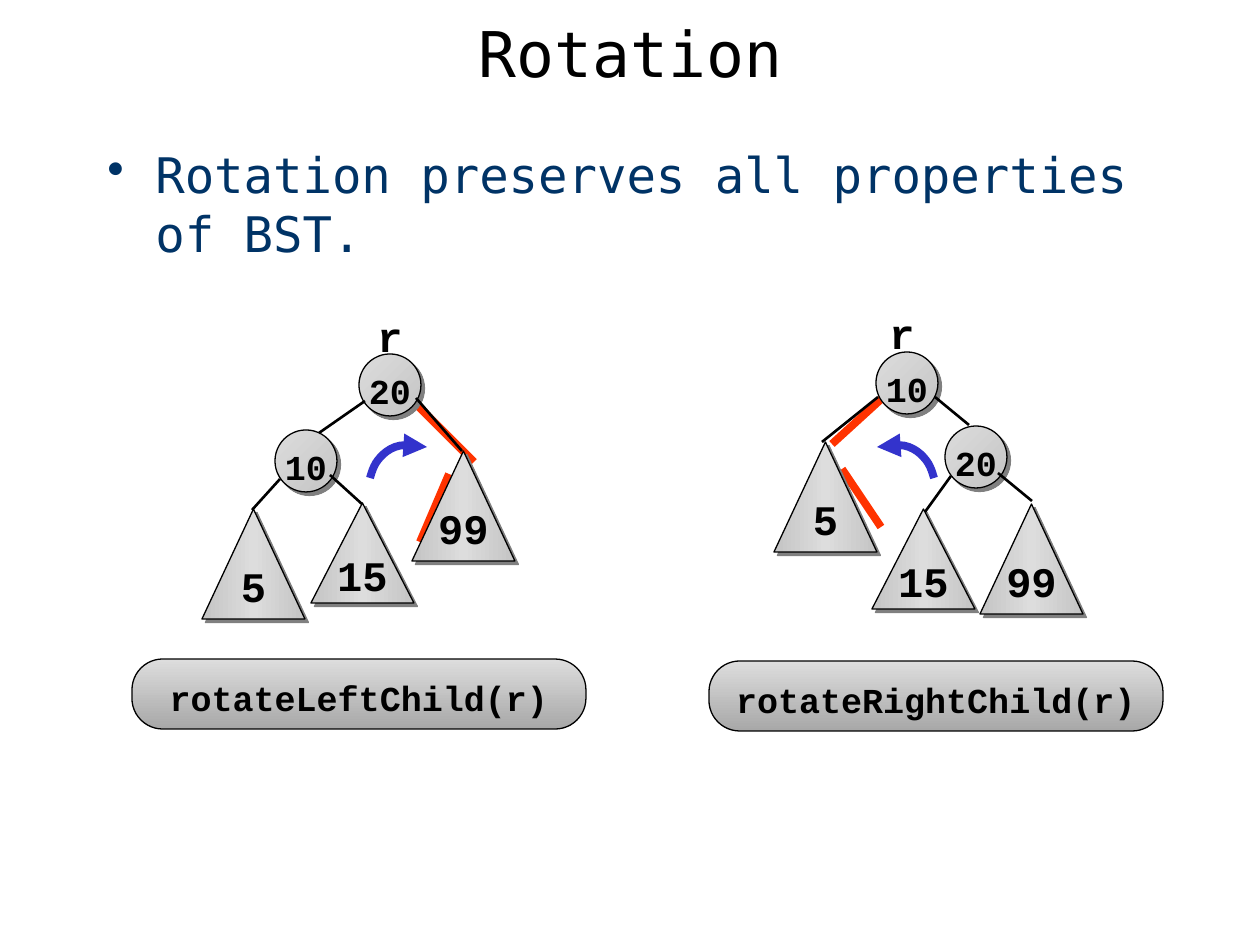
from lxml import etree
from pptx import Presentation
from pptx import util as u
from pptx.dml.color import RGBColor
from pptx.enum import shapes, text
from pptx.oxml import ns

BLACK = RGBColor(0x00, 0x00, 0x00)
NAVY = RGBColor(0x00, 0x33, 0x66)
BLUE = RGBColor(0x33, 0x33, 0xCC)
RED = RGBColor(0xFF, 0x33, 0x00)
SHADOW = RGBColor(0x80, 0x80, 0x80)
LIGHT = RGBColor(0xDD, 0xDD, 0xDD)
MID = RGBColor(0xC4, 0xC4, 0xC4)
DARK = RGBColor(0xA8, 0xA8, 0xA8)
SANS = "DejaVu Sans Mono"
MONO = "Courier New"
CIRCLE, TRIANGLE_W = 62, 103

ARC = [
    [(0, 34), (2, 27), (4, 21), (8, 16)],
    [(8, 16), (12, 11), (17, 6), (25, 3)],
    [(25, 3), (32, 0), (45, 1), (57, 3)],
]

LEFT = {
    "label": (233, 0),
    "marks": [((276, 99), (342, 165)), ((288, 245), (317, 177))],
    "triangles": [("15", 179, 206, 100), ("99", 280, 154, 110), ("5", 70, 212, 110)],
    "circles": [("20", 227, 57), ("10", 143, 133)],
    "edges": [((233, 104), (187, 136)), ((284, 101), (330, 154)),
              ((148, 182), (120, 213)), ((198, 178), (230, 207))],
    "arc": (238, 147),
    "mirror": False,
    "call": ("rotateLeftChild(r)", 362),
}
RIGHT = {
    "label": (168, 0),
    "marks": [((133, 175), (172, 233)), ((192, 87), (123, 150))],
    "triangles": [("15", 163, 215, 100), ("5", 65, 148, 110), ("99", 271, 210, 110)],
    "circles": [("10", 167, 58), ("20", 236, 132)],
    "edges": [((169, 103), (113, 148)), ((226, 103), (260, 131)),
              ((242, 182), (216, 218)), ((289, 179), (323, 207))],
    "arc": (168, 150),
    "mirror": True,
    "call": ("rotateRightChild(r)", 367),
}


def px(n):
    return u.Emu(round(n * 914400 / 126))


def add(parent, tag, **attrs):
    el = etree.SubElement(parent, ns.qn(tag))
    for key, value in attrs.items():
        el.set(key, str(value))
    return el


def write(sp, words, size, font, color, bold=False, align=text.PP_ALIGN.CENTER,
          anchor=text.MSO_ANCHOR.TOP, wrap=False, top=6):
    tf = sp.text_frame
    tf.text = words
    tf.word_wrap = wrap
    tf.vertical_anchor = anchor
    tf.margin_top = px(top)
    p = tf.paragraphs[0]
    p.alignment = align
    f = p.runs[0].font
    f.size, f.name, f.bold = u.Pt(size), font, bold
    f.color.rgb = color
    return p


def textbox(s, box, words, size, font, color, **style):
    sp = s.shapes.add_textbox(*map(px, box))
    return write(sp, words, size, font, color, **style)


def gradient_shape(s, kind, box, colors, angle, shadow):
    sp = s.shapes.add_shape(kind, *map(px, box))
    sp.shadow.inherit = False
    sp.line.color.rgb = BLACK
    sp.line.width = u.Pt(0.75)
    sp.fill.gradient()
    spPr = sp._element.spPr
    grad = spPr.find(ns.qn("a:gradFill"))
    for child in list(grad):
        grad.remove(child)
    stops = add(grad, "a:gsLst")
    for i, color in enumerate(colors):
        gs = add(stops, "a:gs", pos=100000 * i // (len(colors) - 1))
        add(gs, "a:srgbClr", val=color)
    add(grad, "a:lin", ang=angle * 60000, scaled=0)
    if shadow:
        shade = add(spPr.find(ns.qn("a:effectLst")), "a:outerShdw", blurRad=0,
                    dist=u.Pt(2.8), dir=45 * 60000, algn="ctr", rotWithShape=0)
        add(shade, "a:srgbClr", val=SHADOW)
    return sp


def node(s, kind, box, words, size, colors, angle):
    sp = gradient_shape(s, kind, box, colors, angle, True)
    p = write(sp, words, size, MONO, BLACK, bold=True)
    tf = sp.text_frame
    tf.margin_left = tf.margin_right = tf.margin_bottom = 0
    return p


def line(s, x, y, ends, color, width):
    (x1, y1), (x2, y2) = ends
    c = s.shapes.add_connector(shapes.MSO_CONNECTOR.STRAIGHT, px(x + x1), px(y + y1),
                               px(x + x2), px(y + y2))
    c.line.color.rgb = color
    c.line.width = u.Pt(width)
    add(c._element.spPr, "a:effectLst")


def bezier(curve, t):
    weights = ((1 - t) ** 3, 3 * t * (1 - t) ** 2, 3 * t * t * (1 - t), t ** 3)
    return [sum(w * pt[axis] for w, pt in zip(weights, curve)) for axis in (0, 1)]


def turn_arrow(s, x, y, mirror):
    pts = [ARC[0][0]] + [bezier(curve, k / 5) for curve in ARC for k in range(1, 6)]
    pts = [(px(x + (57 - a if mirror else a)), px(y + b)) for a, b in pts]
    fb = s.shapes.build_freeform(*pts[0], scale=1.0)
    fb.add_line_segments(pts[1:], close=False)
    sp = fb.convert_to_shape()
    sp.shadow.inherit = False
    sp.fill.background()
    sp.line.color.rgb = BLUE
    sp.line.width = u.Pt(4.5)
    add(sp.line._get_or_add_ln(), "a:tailEnd", type="triangle")


def tree(s, x, y, parts):
    for ends in parts["marks"]:
        line(s, x, y, ends, RED, 4.5)
    for words, dx, dy, h in parts["triangles"]:
        p = node(s, shapes.MSO_SHAPE.ISOSCELES_TRIANGLE, (x + dx, y + dy, TRIANGLE_W, h),
                 words, 24, (MID, LIGHT, MID), 0)
        p.line_spacing = 0.8
    for words, dx, dy in parts["circles"]:
        node(s, shapes.MSO_SHAPE.OVAL, (x + dx, y + dy, CIRCLE, CIRCLE),
             words, 20, (LIGHT, MID), 45)
    for ends in parts["edges"]:
        line(s, x, y, ends, BLACK, 1.5)
    dx, dy = parts["arc"]
    turn_arrow(s, x + dx, y + dy, parts["mirror"])
    words, dy = parts["call"]
    sp = gradient_shape(s, shapes.MSO_SHAPE.ROUNDED_RECTANGLE, (x, y + dy, 454, 70),
                        (LIGHT, DARK), 90, False)
    sp.adjustments[0] = 0.44
    write(sp, words, 20, MONO, BLACK, bold=True, anchor=text.MSO_ANCHOR.MIDDLE, top=14)
    dx, dy = parts["label"]
    textbox(s, (x + dx, y + dy, 50, 63), "r", 24, MONO, BLACK, bold=True,
            align=text.PP_ALIGN.LEFT, top=14)


def heading(s, box):
    textbox(s, box, "Rotation", 36, SANS, BLACK, anchor=text.MSO_ANCHOR.MIDDLE, wrap=True)


def body(s, box):
    p = textbox(s, box, "Rotation preserves all properties of BST.", 28, SANS, NAVY,
                align=text.PP_ALIGN.LEFT, wrap=True, top=9)
    pPr = p._p.get_or_add_pPr()
    pPr.set("marL", str(px(48)))
    pPr.set("indent", str(-px(48)))
    add(pPr, "a:buChar", char="•")


def main():
    prs = Presentation()
    prs.slide_width, prs.slide_height = px(1260), px(945)
    s = prs.slides.add_slide(prs.slide_layouts[6])
    heading(s, (95, 0, 1071, 105))
    body(s, (95, 136, 1120, 165))
    tree(s, 132, 297, LEFT)
    tree(s, 709, 294, RIGHT)
    prs.save("out.pptx")


if __name__ == "__main__":
    main()
